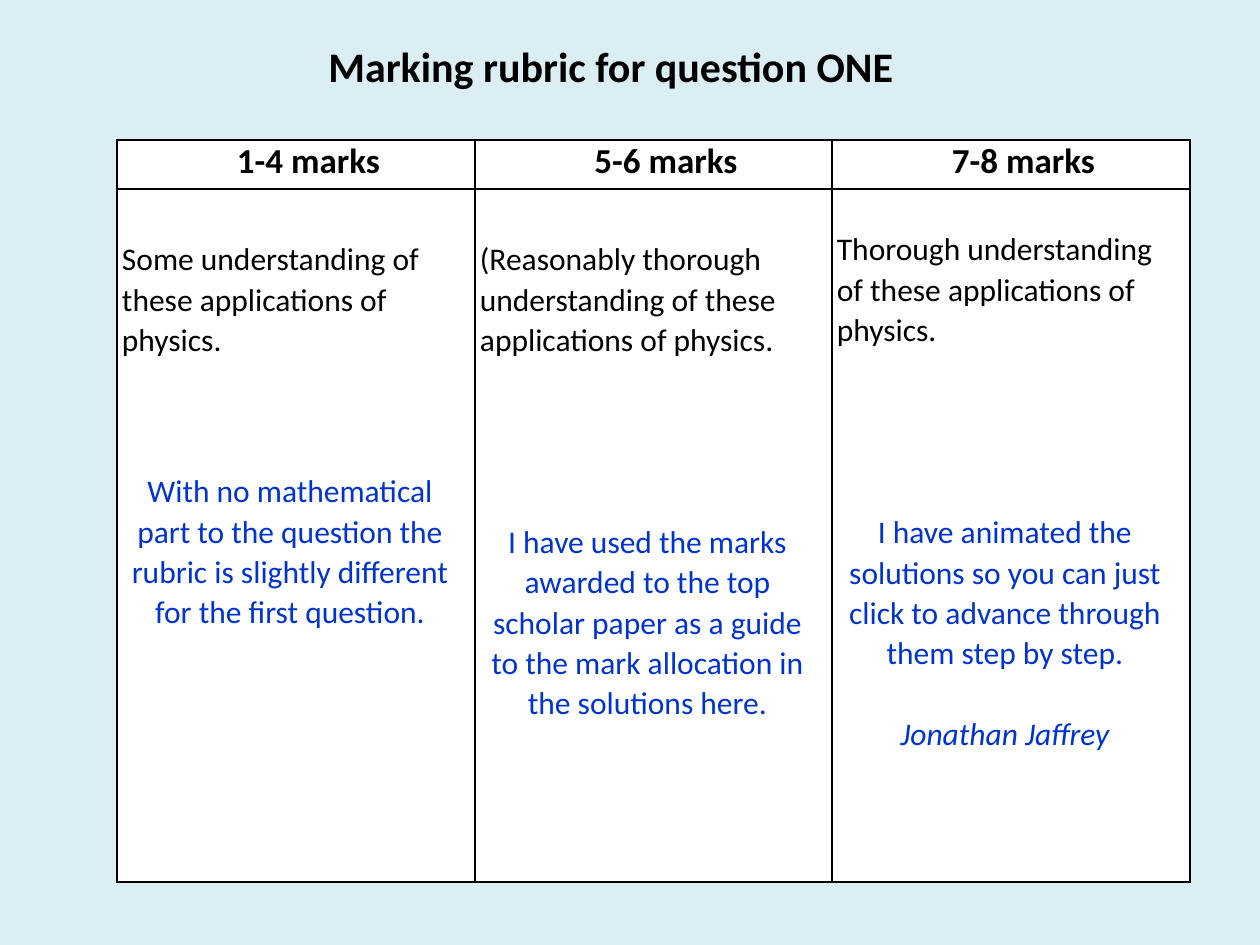
from dataclasses import dataclass

from lxml import etree
from pptx import Presentation
from pptx.dml.color import RGBColor
from pptx.enum import text
from pptx.oxml import ns
from pptx import util as u

SCALE = 914400 / 126


@dataclass(frozen=True)
class Theme:
    font: str = "Calibri"
    background: str = "DBEEF4"
    cell: str = "FFFFFF"
    ink: str = "000000"
    note: str = "0033CC"
    title_size: int = 24
    header_size: int = 20
    body_size: int = 18


THEME = Theme()
LEFT, CENTER = text.PP_ALIGN.LEFT, text.PP_ALIGN.CENTER
HEADER = dict(alignment=CENTER)
HEADER_FONT = dict(size=THEME.header_size, bold=True)
BODY = dict(alignment=LEFT, line_spacing=1.05)
NOTE = dict(BODY, alignment=CENTER)

RUBRIC = [
    ("1-4 marks", 50, [
        ("Some understanding of these applications of physics.", BODY, 0, {}),
        ("With no mathematical part to the question the rubric is slightly "
         "different for the first question.", NOTE, 63.5, dict(color=THEME.note)),
    ]),
    ("5-6 marks", 50, [
        ("(Reasonably thorough understanding of these applications of physics.", BODY, 0, {}),
        ("I have used the marks awarded to the top scholar paper as a guide to the "
         "mark allocation in the solutions here.", NOTE, 92.5, dict(color=THEME.note)),
    ]),
    ("7-8 marks", 40, [
        ("Thorough understanding of these applications of physics.", BODY, 0, {}),
        ("I have animated the solutions so you can just click to advance through "
         "them step by step.", NOTE, 92.5, dict(color=THEME.note)),
        ("Jonathan Jaffrey", NOTE, 23, dict(color=THEME.note, italic=True)),
    ]),
]


def px(length):
    return u.Emu(round(length * SCALE))


def apply(target, values):
    for name, value in values.items():
        setattr(target, name, value)


def write(paragraph, words, layout, size=THEME.body_size, color=THEME.ink,
          bold=False, italic=False):
    apply(paragraph, layout)
    run = paragraph.add_run()
    run.text = words
    apply(run.font, dict(name=THEME.font, size=u.Pt(size), bold=bold, italic=italic))
    run.font.color.rgb = RGBColor.from_string(color)


def set_borders(cell):
    properties = cell._tc.get_or_add_tcPr()
    for side in ("lnL", "lnR", "lnT", "lnB"):
        line = etree.SubElement(properties, ns.qn(f"a:{side}"), w=str(u.Pt(1)))
        fill = etree.SubElement(line, ns.qn("a:solidFill"))
        etree.SubElement(fill, ns.qn("a:srgbClr"), val=THEME.ink)


def fill_cell(cell, margins, paragraphs):
    set_borders(cell)
    cell.fill.solid()
    cell.fill.fore_color.rgb = RGBColor.from_string(THEME.cell)
    sides = ("left", "top", "right", "bottom")
    apply(cell, {f"margin_{side}": px(margin) for side, margin in zip(sides, margins)})
    frame = cell.text_frame
    for index, (words, layout, gap, font) in enumerate(paragraphs):
        paragraph = frame.add_paragraph() if index else frame.paragraphs[0]
        write(paragraph, words, dict(layout, space_before=u.Pt(gap)), **font)


def add_title(slide, words):
    box = slide.shapes.add_textbox(px(316), px(34), px(596), px(63))
    apply(box.text_frame, dict(word_wrap=False, auto_size=text.MSO_AUTO_SIZE.SHAPE_TO_FIT_TEXT))
    write(box.text_frame.paragraphs[0], words, {}, THEME.title_size, bold=True)


def add_rubric(slide):
    widths, heights = (358, 357, 358), (49, 693)
    frame = slide.shapes.add_table(len(heights), len(widths), px(117), px(140),
                                   px(sum(widths)), px(sum(heights)))
    table = frame.table
    apply(table, dict(first_row=False, horz_banding=False))
    for row, height in zip(table.rows, heights):
        row.height = px(height)
    for index, (heading, top, paragraphs) in enumerate(RUBRIC):
        table.columns[index].width = px(widths[index])
        fill_cell(table.cell(0, index), (25, 0, 0, 0), [(heading, HEADER, 0, HEADER_FONT)])
        fill_cell(table.cell(1, index), (5, top, 17, 0), paragraphs)


def main():
    presentation = Presentation()
    apply(presentation, dict(slide_width=px(1260), slide_height=px(945)))
    slide = presentation.slides.add_slide(presentation.slide_layouts[6])
    slide.background.fill.solid()
    slide.background.fill.fore_color.rgb = RGBColor.from_string(THEME.background)
    add_rubric(slide)
    add_title(slide, "Marking rubric for question ONE")
    presentation.save("out.pptx")


if __name__ == "__main__":
    main()
